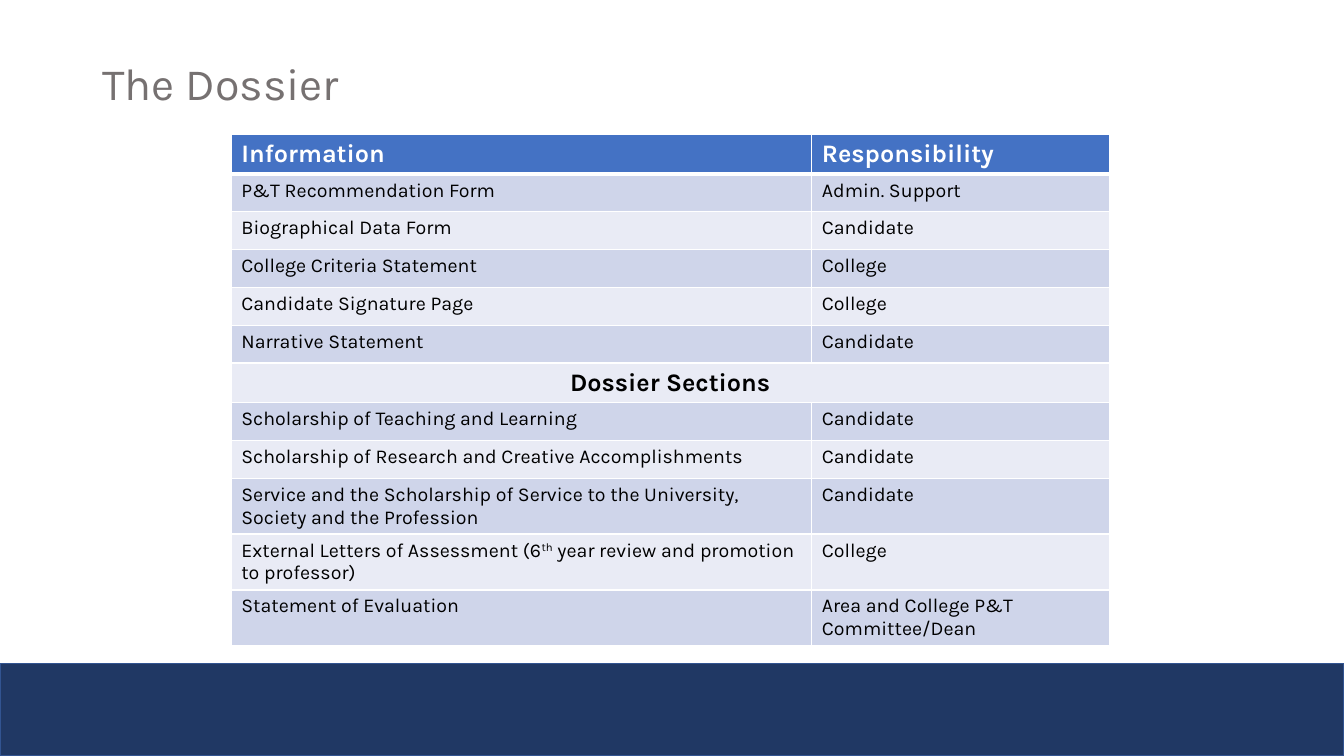
from lxml import etree
from pptx import Presentation
from pptx.dml.color import RGBColor
from pptx.enum import shapes, text
from pptx.oxml import ns
from pptx.util import Pt

ROWS = [
    ("Information", "Responsibility"),
    ("P&T Recommendation Form", "Admin. Support"),
    ("Biographical Data Form", "Candidate"),
    ("College Criteria Statement", "College"),
    ("Candidate Signature Page", "College"),
    ("Narrative Statement", "Candidate"),
    ("Dossier Sections", None),
    ("Scholarship of Teaching and Learning", "Candidate"),
    ("Scholarship of Research and Creative Accomplishments", "Candidate"),
    ("Service and the Scholarship of Service to the University, "
     "Society and the Profession", "Candidate"),
    ("External Letters of Assessment (6^th^ year review and promotion to professor)",
     "College"),
    ("Statement of Evaluation", "Area and College P&T Committee/Dean"),
]
COLUMN_WIDTHS = (414.7, 212.4)
HEADING_HEIGHT, LINE_HEIGHT, TWO_LINE_HEIGHT = 28, 27, 39.6
FIRST_TWO_LINE_ROW = 9


def color(value):
    return RGBColor.from_string(value)


class DossierSlide:
    font_name = "Karla"
    header_fill = "4472C4"
    band_fills = ("E9EBF5", "CFD5EA")

    def __init__(self, presentation):
        self.slide = presentation.slides.add_slide(presentation.slide_layouts[5])

    def style(self, paragraph, size, ink, bold=False):
        font = paragraph.font
        font.name, font.size, font.bold = self.font_name, Pt(size), bold
        font.color.rgb = color(ink)

    def bar(self, left, top, width, height, fill, line):
        shape = self.slide.shapes.add_shape(
            shapes.MSO_SHAPE.RECTANGLE, Pt(left), Pt(top), Pt(width), Pt(height))
        shape.shadow.inherit = False
        shape.fill.solid()
        shape.fill.fore_color.rgb = color(fill)
        shape.line.color.rgb = color(line)
        shape.line.width = Pt(1)

    def title(self, wording, left, top, width, height):
        title = self.slide.shapes.title
        title.left, title.top, title.width, title.height = map(
            Pt, (left, top, width, height))
        frame = title.text_frame
        frame.text = wording
        frame.vertical_anchor = text.MSO_ANCHOR.MIDDLE
        paragraph = frame.paragraphs[0]
        paragraph.alignment = text.PP_ALIGN.LEFT
        paragraph.line_spacing = 0.9
        self.style(paragraph, 32, "767171")

    def borders(self, cell, header):
        properties = cell._tc.get_or_add_tcPr()
        for side in "LRTB":
            width = 3 if header and side == "B" else 1
            line = etree.SubElement(properties, ns.qn(f"a:ln{side}"), w=str(Pt(width)))
            fill = etree.SubElement(line, ns.qn("a:solidFill"))
            etree.SubElement(fill, ns.qn("a:srgbClr"), val="FFFFFF")

    def cell(self, cell, wording, row, heading):
        header = row == 0
        self.borders(cell, header)
        cell.fill.solid()
        cell.fill.fore_color.rgb = color(
            self.header_fill if header else self.band_fills[row % 2])
        paragraph = cell.text_frame.paragraphs[0]
        self.style(paragraph, 18 if heading else 14,
                   "FFFFFF" if header else "000000", heading)
        # Wording between carets is superscript
        for index, part in enumerate(wording.split("^")):
            run = paragraph.add_run()
            run.text = part
            if index % 2:
                run._r.get_or_add_rPr().set("baseline", "30000")
        return paragraph

    def table(self, rows, left, top):
        heights = [
            HEADING_HEIGHT if index == 0 or row[1] is None
            else TWO_LINE_HEIGHT if index >= FIRST_TWO_LINE_ROW else LINE_HEIGHT
            for index, row in enumerate(rows)]
        table = self.slide.shapes.add_table(
            len(rows), len(COLUMN_WIDTHS), Pt(left), Pt(top),
            Pt(sum(COLUMN_WIDTHS)), Pt(sum(heights))).table
        for column, width in zip(table.columns, COLUMN_WIDTHS):
            column.width = Pt(width)
        for index, (information, responsibility) in enumerate(rows):
            table.rows[index].height = Pt(heights[index])
            first, second = table.cell(index, 0), table.cell(index, 1)
            section = responsibility is None
            heading = section or index == 0
            paragraph = self.cell(first, information, index, heading)
            if section:
                first.merge(second)
                paragraph.alignment = text.PP_ALIGN.CENTER
            else:
                self.cell(second, responsibility, index, heading)


def main():
    presentation = Presentation()
    presentation.slide_width, presentation.slide_height = Pt(960), Pt(540)
    dossier = DossierSlide(presentation)

    # Footer band
    dossier.bar(0, 474, 960, 66, "203864", "325491")

    # Title and responsibilities
    dossier.title("The Dossier", 66, 37.2, 828, 49)
    dossier.table(ROWS, 165.2, 96)

    presentation.save("out.pptx")


if __name__ == "__main__":
    main()
